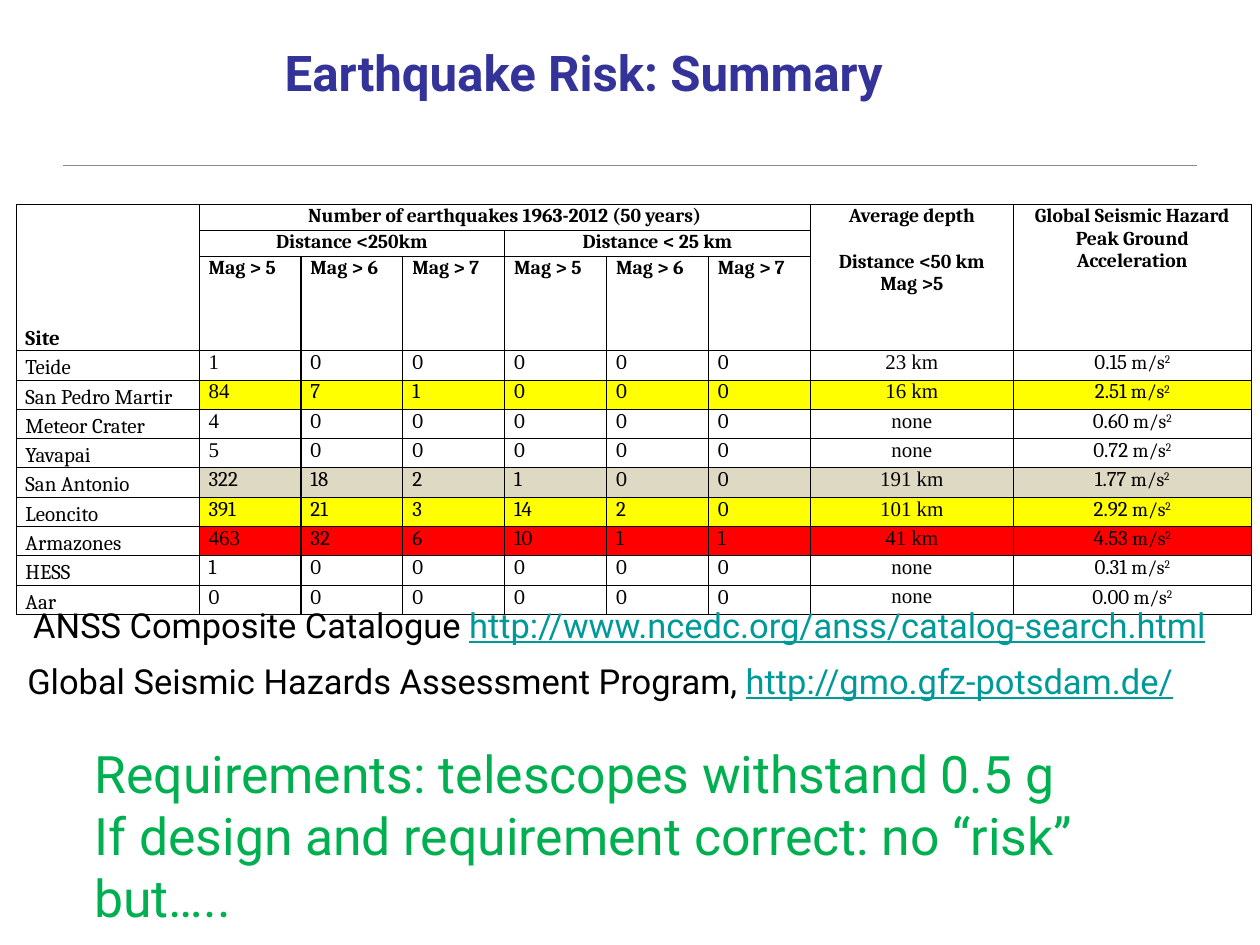
from dataclasses import dataclass
from lxml import etree
from pptx import Presentation, util as u
from pptx.dml.color import RGBColor as Rgb
from pptx.enum import shapes, text
from pptx.oxml import ns

ALIGN = text.PP_ALIGN


@dataclass(frozen=True)
class Theme:
    """Hold fonts, type sizes in points and colours."""
    sans: str = "Roboto"
    serif: str = "Cambria"
    times: str = "Times New Roman"
    title: int = 40
    note: int = 42
    source: int = 28
    body: int = 17
    small: int = 16
    gap: int = 19
    ink: str = "000000"
    navy: str = "333399"
    teal: str = "009999"
    green: str = "00B050"
    grey: str = "888888"
    yellow: str = "FFFF00"
    sand: str = "DDD9C3"
    red: str = "FF0000"


T = Theme()
MAGS = ["Mag > 5", "Mag > 6", "Mag > 7"]
SITES = [
    ("Teide", "1 0 0 0 0 0", "23 km", "0.15", None, T.times),
    ("San Pedro Martir", "84 7 1 0 0 0", "16 km", "2.51", T.yellow, T.times),
    ("Meteor Crater", "4 0 0 0 0 0", "none", "0.60", None, T.times),
    ("Yavapai", "5 0 0 0 0 0", "none", "0.72", None, T.times),
    ("San Antonio", "322 18 2 1 0 0", "191 km", "1.77", T.sand, T.serif),
    ("Leoncito", "391 21 3 14 2 0", "101 km", "2.92", T.yellow, T.serif),
    ("Armazones", "463 32 6 10 1 1", "41 km", "4.53", T.red, T.times),
    ("HESS", "1 0 0 0 0 0", "none", "0.31", None, T.serif),
    ("Aar", "0 0 0 0 0 0", "none", "0.00", None, T.serif),
]


def style(run, face, size, hue, bold=False):
    """Set the look of one run."""
    font = run.font
    font.name, font.size, font.bold = face, u.Pt(size), bold
    font.color.rgb = Rgb.from_string(hue)


def add_box(slide, box, words, size, hue, bold=False, wrap=False, align=None, pad=None):
    """Add a text box that grows with its text and return its frame."""
    frame = slide.shapes.add_textbox(*map(u.Cm, box)).text_frame
    frame.text = words
    frame.word_wrap = wrap
    frame.auto_size = text.MSO_AUTO_SIZE.SHAPE_TO_FIT_TEXT
    if pad:
        frame.margin_left = frame.margin_right = u.Cm(pad)
        frame.margin_top = frame.margin_bottom = u.Cm(pad / 2)
    for para in frame.paragraphs:
        para.alignment = align
        style(para.runs[0], T.sans, size, hue, bold)
    return frame


def add_head(slide, box):
    """Add the title and the rule below it."""
    x, y, w, h = box
    add_box(slide, (x + 5.31, y, 19.25, 2.08), "Earthquake Risk: Summary", T.title,
            T.navy, bold=True, align=ALIGN.CENTER, pad=0.36)
    rule = slide.shapes.add_connector(
        shapes.MSO_CONNECTOR.STRAIGHT, u.Cm(x), u.Cm(y + h), u.Cm(x + w), u.Cm(y + h))
    rule.line.color.rgb = Rgb.from_string(T.grey)
    rule.line.width = u.Pt(1)
    etree.SubElement(rule._element.spPr, ns.qn("a:effectLst"))


def add_edge(cell):
    """Draw a thin line on all four sides of a cell."""
    props = cell._tc.get_or_add_tcPr()
    for spot, side in enumerate(("lnL", "lnR", "lnT", "lnB")):
        line = etree.Element(ns.qn("a:" + side), w=str(u.Pt(1)))
        paint = etree.SubElement(line, ns.qn("a:solidFill"))
        etree.SubElement(paint, ns.qn("a:srgbClr"), val=T.ink)
        props.insert(spot, line)


def put(cell, words, face=T.serif, size=T.body, bold=False, align=None):
    """Write text into a table cell."""
    cell.text = words
    for para in cell.text_frame.paragraphs:
        para.alignment = align
        style(para.runs[0], face, size, T.ink, bold)


def add_unit(cell):
    """Append the unit of acceleration to a cell."""
    para = cell.text_frame.paragraphs[0]
    for words in (" m/s", "2"):
        run = para.add_run()
        run.text = words
        style(run, T.serif, T.small, T.ink)
    run._r.get_or_add_rPr().set("baseline", "30000")


def fill_head(grid):
    """Merge and label the three header rows."""
    spans = [
        (0, 0, 2, 0, "Site", T.body, None),
        (0, 1, 0, 6, "Number of earthquakes 1963-2012 (50 years)", T.small, ALIGN.CENTER),
        (0, 7, 2, 7, "Average depth\nDistance <50 km\nMag >5", T.small, ALIGN.CENTER),
        (0, 8, 2, 8, "Global Seismic Hazard\nPeak Ground Acceleration", T.small, ALIGN.CENTER),
        (1, 1, 1, 3, "Distance <250km", T.small, ALIGN.CENTER),
        (1, 4, 1, 6, "Distance < 25 km", T.small, ALIGN.CENTER),
    ]
    for top, left, low, right, words, size, align in spans:
        cell = grid.cell(top, left)
        cell.merge(grid.cell(low, right))
        put(cell, words, size=size, bold=True, align=align)
    for col, words in enumerate(MAGS * 2, 1):
        put(grid.cell(2, col), words, size=T.small, bold=True, align=ALIGN.JUSTIFY)
    grid.cell(0, 0).vertical_anchor = text.MSO_ANCHOR.BOTTOM
    grid.cell(0, 7).text_frame.paragraphs[1].space_before = u.Pt(T.gap)


def fill_site(grid, row, site):
    """Fill the row of one site."""
    name, counts, depth, peak, hue, face = site
    cells = [grid.cell(row, col) for col in range(9)]
    put(cells[0], name)
    cells[0].vertical_anchor = text.MSO_ANCHOR.BOTTOM
    for col, count in enumerate(counts.split(), 1):
        put(cells[col], count, face if col == 1 else T.serif)
    put(cells[7], depth, T.times, align=ALIGN.CENTER)
    put(cells[8], peak, align=ALIGN.CENTER)
    add_unit(cells[8])
    if hue:
        for cell in cells[1:]:
            cell.fill.solid()
            cell.fill.fore_color.rgb = Rgb.from_string(hue)


def add_grid(slide, box):
    """Add the table of earthquakes by site."""
    w, h = box[2:]
    tops = [0.74, 0.74, 2.71]
    rows = tops + [(h - sum(tops)) / len(SITES)] * len(SITES)
    cols = [2.92] * 6 + [5.82, 6.82]
    cols = [w - sum(cols)] + cols
    grid = slide.shapes.add_table(len(rows), len(cols), *map(u.Cm, box)).table
    grid.first_row = grid.horz_banding = False
    for part, size in zip(grid.rows, rows):
        part.height = u.Cm(size)
    for part, size in zip(grid.columns, cols):
        part.width = u.Cm(size)
    for cell in grid.iter_cells():
        cell.margin_left = cell.margin_right = u.Cm(0.27)
        cell.margin_top = cell.margin_bottom = 0
        cell.fill.background()
        add_edge(cell)
    fill_head(grid)
    for row, site in enumerate(SITES, len(tops)):
        fill_site(grid, row, site)


def add_source(slide, box, words, link, wrap):
    """Add one data source with its web address."""
    frame = add_box(slide, box, words, T.source, T.ink, wrap=wrap,
                    align=ALIGN.CENTER, pad=0.36)
    run = frame.paragraphs[0].add_run()
    run.text = link
    style(run, T.sans, T.source, T.teal)
    run.font.underline = True


def main():
    """Build the slide and save it."""
    deck = Presentation()
    deck.slide_width, deck.slide_height = u.Cm(36.12), u.Cm(27.1)
    slide = deck.slides.add_slide(deck.slide_layouts[6])
    add_head(slide, (1.8, 1.04, 32.51, 3.71))
    add_grid(slide, (0.46, 5.87, 35.41, 11.75))
    add_source(slide, (0.13, 18.75, 34.14, 1.55),
               "Global Seismic Hazards Assessment Program, ",
               "http://gmo.gfz-potsdam.de/", False)
    add_source(slide, (0.46, 17.15, 34.59, 1.57), "ANSS Composite Catalogue ",
               "http://www.ncedc.org/anss/catalog-search.html", True)
    add_box(slide, (2.46, 21.16, 31.29, 5.64),
            "Requirements: telescopes withstand 0.5 g\n"
            "If design and requirement correct: no “risk”\nbut…..",
            T.note, T.green, wrap=True)
    deck.save("out.pptx")


if __name__ == "__main__":
    main()
